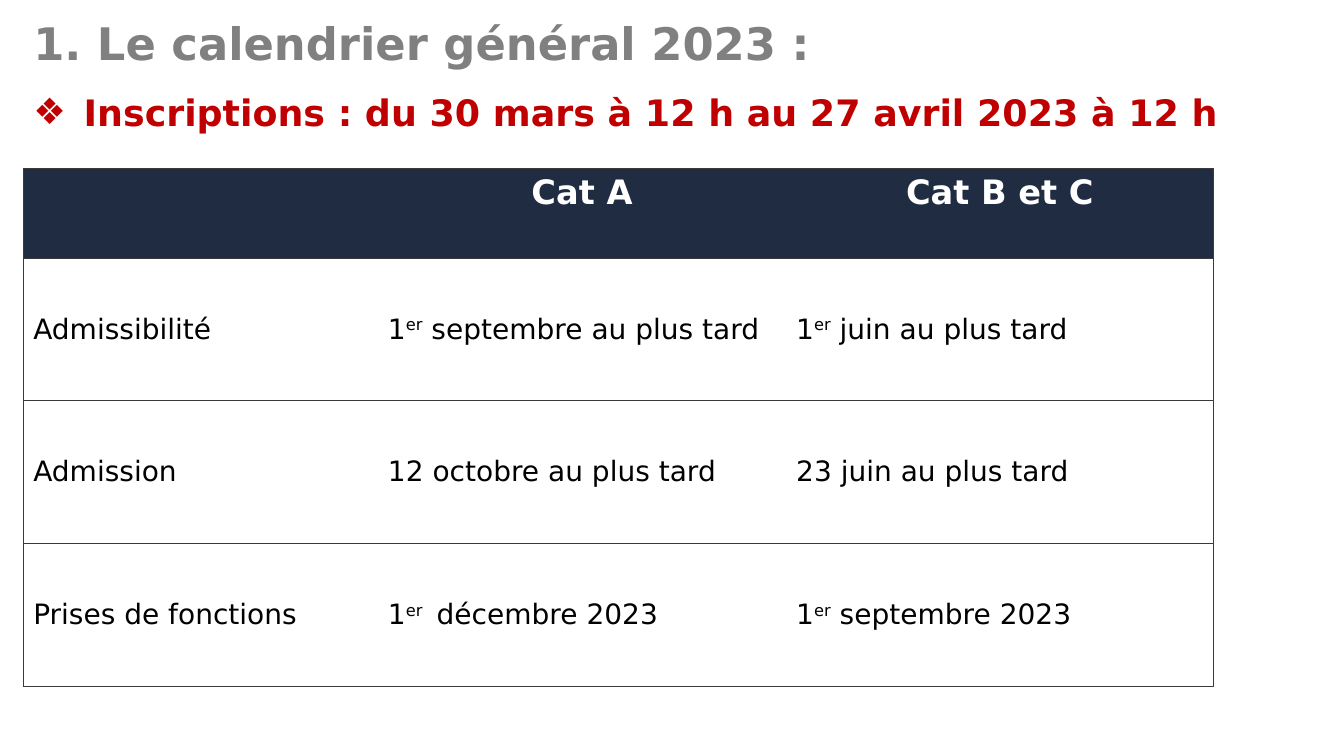
from dataclasses import dataclass

from lxml.etree import SubElement
from pptx import Presentation
from pptx.dml.color import RGBColor
from pptx.enum.text import MSO_ANCHOR, MSO_AUTO_SIZE, PP_ALIGN
from pptx.oxml.ns import qn
from pptx.util import Pt

FONT = "DejaVu Sans"
GREY = RGBColor(0x80, 0x80, 0x80)
RED = RGBColor(0xC0, 0x00, 0x00)
NAVY = RGBColor(0x20, 0x2C, 0x41)
BORDER = RGBColor(0x3A, 0x3A, 0x3C)
WHITE = RGBColor(0xFF, 0xFF, 0xFF)
BLACK = RGBColor(0x00, 0x00, 0x00)

LEFT = 16.56
COLUMN_WIDTHS = (253.4, 291.6, 305.3)
HEADER_HEIGHT = 64.1
ROW_HEIGHT = 102


@dataclass(frozen=True)
class Entry:
    """Cell text, with an optional raised part between two plain parts."""
    start: str
    raised: str = ""
    end: str = ""


@dataclass(frozen=True)
class TextStyle:
    size: float
    color: RGBColor
    bold: bool


HEADING = TextStyle(32, GREY, True)
REGISTRATION = TextStyle(26, RED, True)
TABLE_HEADER = TextStyle(24, WHITE, True)
TABLE_BODY = TextStyle(20, BLACK, False)

ROWS = (
    (Entry(""), Entry("Cat A"), Entry("Cat B et C")),
    (Entry("Admissibilité"), Entry("1", "er", " septembre au plus tard"),
     Entry("1", "er", " juin au plus tard")),
    (Entry("Admission"), Entry("12 octobre au plus tard"),
     Entry("23 juin au plus tard")),
    (Entry("Prises de fonctions"), Entry("1", "er ", " décembre 2023"),
     Entry("1", "er", " septembre 2023")),
)


def style_paragraph(paragraph, style: TextStyle) -> None:
    font = paragraph.font
    font.name = FONT
    font.size = Pt(style.size)
    font.bold = style.bold
    font.color.rgb = style.color


def fill_placeholder(shape, text: str, top: float, height: float):
    shape.left, shape.top = Pt(LEFT), Pt(top)
    shape.width, shape.height = Pt(890), Pt(height)
    frame = shape.text_frame
    frame.auto_size = MSO_AUTO_SIZE.NONE
    frame.word_wrap = True
    frame.vertical_anchor = MSO_ANCHOR.TOP
    paragraph = frame.paragraphs[0]
    paragraph.text = text
    paragraph.alignment = PP_ALIGN.LEFT
    paragraph.space_before = Pt(0)
    return paragraph


def add_bullet(paragraph, symbol: str, indent: float) -> None:
    properties = paragraph._p.get_or_add_pPr()
    properties.set("marL", str(Pt(indent)))
    properties.set("indent", str(-Pt(indent)))
    SubElement(properties, qn("a:buFont"), typeface=FONT)
    SubElement(properties, qn("a:buChar"), char=symbol)


def set_borders(cell, visible: dict[str, bool]) -> None:
    properties = cell._tc.get_or_add_tcPr()
    for side, shown in visible.items():
        line = SubElement(properties, qn(f"a:ln{side}"), w=str(Pt(0.5)))
        if shown:
            solid = SubElement(line, qn("a:solidFill"))
            SubElement(solid, qn("a:srgbClr"), val=str(BORDER))
        else:
            SubElement(line, qn("a:noFill"))


def write_entry(paragraph, entry: Entry) -> None:
    for text in (entry.start, entry.raised, entry.end):
        if text:
            run = paragraph.add_run()
            run.text = text
            if text == entry.raised:
                run._r.get_or_add_rPr().set("baseline", "30000")


def add_calendar(slide) -> None:
    height = HEADER_HEIGHT + ROW_HEIGHT * (len(ROWS) - 1)
    table = slide.shapes.add_table(
        len(ROWS), len(COLUMN_WIDTHS), Pt(LEFT), Pt(120.2),
        Pt(sum(COLUMN_WIDTHS)), Pt(height)).table
    table.first_row = table.horz_banding = False
    for column, width in zip(table.columns, COLUMN_WIDTHS):
        column.width = Pt(width)

    last_column = len(COLUMN_WIDTHS) - 1
    for row_index, entries in enumerate(ROWS):
        is_header = row_index == 0
        table.rows[row_index].height = Pt(HEADER_HEIGHT if is_header else ROW_HEIGHT)
        for column_index, entry in enumerate(entries):
            cell = table.cell(row_index, column_index)
            set_borders(cell, {"L": column_index == 0, "R": column_index == last_column,
                               "T": True, "B": True})
            paragraph = cell.text_frame.paragraphs[0]
            write_entry(paragraph, entry)
            if is_header:
                cell.fill.solid()
                cell.fill.fore_color.rgb = NAVY
                paragraph.alignment = PP_ALIGN.CENTER
                style_paragraph(paragraph, TABLE_HEADER)
            else:
                cell.fill.background()
                cell.vertical_anchor = MSO_ANCHOR.MIDDLE
                style_paragraph(paragraph, TABLE_BODY)


def main() -> None:
    presentation = Presentation()
    presentation.slide_width, presentation.slide_height = Pt(960), Pt(540)
    slide = presentation.slides.add_slide(presentation.slide_layouts[1])

    # Heading
    heading = fill_placeholder(
        slide.shapes.title, "1. Le calendrier général 2023 :", 15.1, 42)
    heading.line_spacing = 0.8
    style_paragraph(heading, HEADING)

    # Registration period
    registration = fill_placeholder(
        slide.placeholders[1],
        "Inscriptions : du 30 mars à 12 h au 27 avril 2023 à 12 h", 61, 42)
    add_bullet(registration, "❖", 36)
    style_paragraph(registration, REGISTRATION)

    # Calendar table
    add_calendar(slide)

    presentation.save("out.pptx")


if __name__ == "__main__":
    main()
